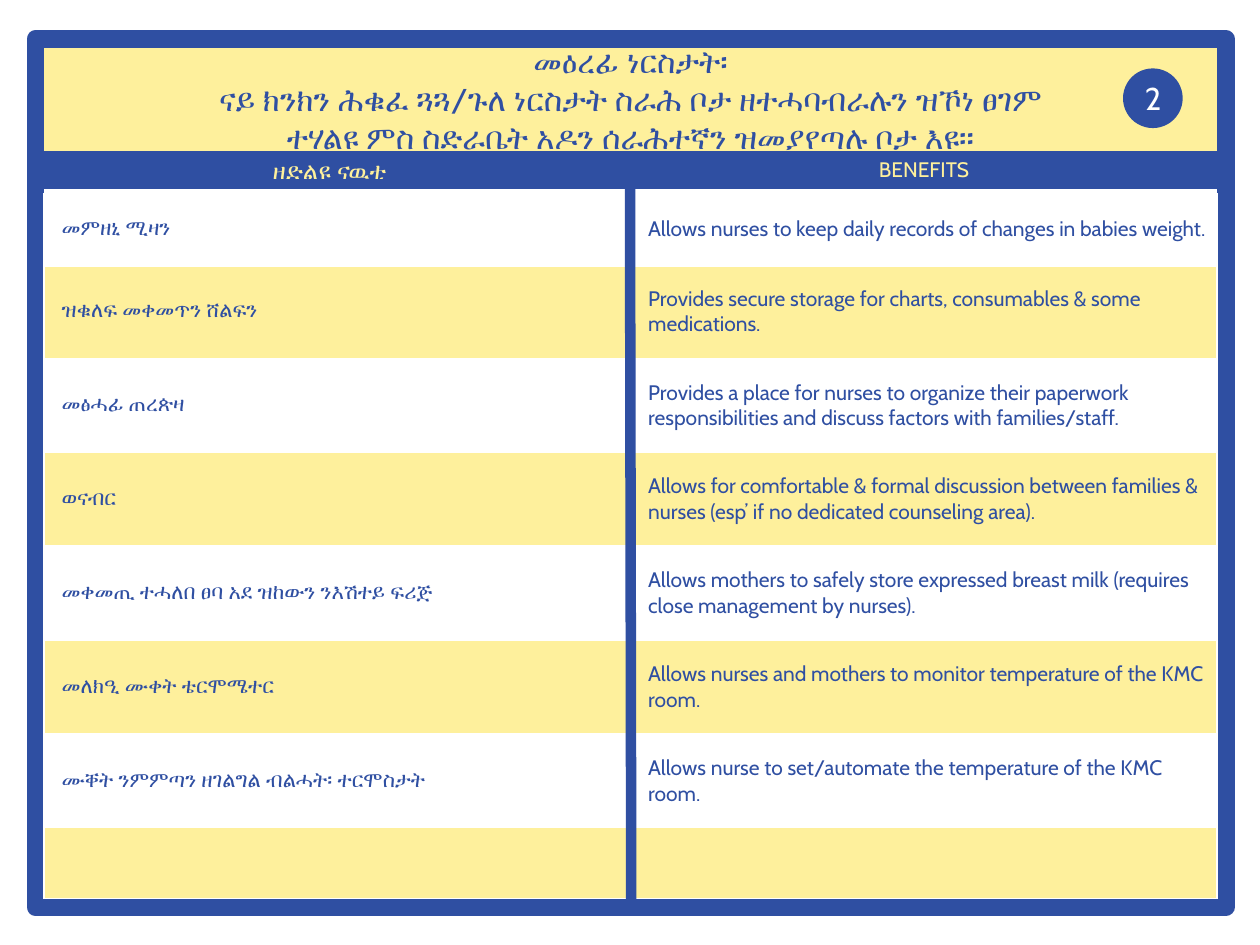
import pptx
import pptx.util
import pptx.dml.color
import pptx.enum.shapes
import pptx.enum.text
import pptx.oxml
import pptx.oxml.ns

COLORS = {"blue": "2F4FA2", "yellow": "FEF09C", "white": "FFFFFF"}
RGB = {name: pptx.dml.color.RGBColor.from_string(value) for name, value in COLORS.items()}
SHAPES = pptx.enum.shapes.MSO_SHAPE
CENTER = pptx.enum.text.PP_ALIGN.CENTER
MIDDLE = pptx.enum.text.MSO_ANCHOR.MIDDLE

presentation = pptx.Presentation()
presentation.slide_width = pptx.util.Inches(10)
presentation.slide_height = pptx.util.Inches(7.5)
slide = presentation.slides.add_slide(presentation.slide_layouts[6])
column = presentation.slide_width / 100
row = presentation.slide_height / 75


def place(left, top, width, height):
    return round(left * column), round(top * row), round(width * column), round(height * row)


def write(text_frame, text, size, color, alignment=None):
    text_frame.word_wrap = True
    text_frame.text = text
    for paragraph in text_frame.paragraphs:
        paragraph.alignment = alignment
        for run in paragraph.runs:
            run.font.name = "Cabin"
            run.font.size = pptx.util.Pt(size)
            run.font.color.rgb = RGB[color]


panels = [
    (SHAPES.RECTANGLE, (2.8, 3.1, 94.5, 11.8), "yellow", None),
    (SHAPES.RECTANGLE, (2.8, 3.1, 94.5, 68.9), None, 10),
    (SHAPES.RECTANGLE, (2.8, 12, 94.5, 3), "blue", None),
]
for kind, box, fill, line_width in panels:
    panel = slide.shapes.add_shape(kind, *place(*box))
    panel.shadow.inherit = False
    if fill:
        panel.fill.solid()
        panel.fill.fore_color.rgb = RGB[fill]
    else:
        panel.fill.background()
    if line_width:
        panel.line.color.rgb = RGB["blue"]
        panel.line.width = pptx.util.Pt(line_width)
    else:
        panel.line.fill.background()

for left, height, text, size in [(2.8, 3.4, "ዘድልዩ ናዉቲ", 14), (50, 3, "BENEFITS", 12)]:
    heading = slide.shapes.add_textbox(*place(left, 11.9, 46.7, height))
    write(heading.text_frame, text, size, "yellow", CENTER)

items = [
    ("መምዘኒ ሚዛን", "Allows nurses to keep daily records of changes in babies weight."),
    ("ዝቁለፍ መቀመጥን ሸልፍን", "Provides secure storage for charts, consumables & some medications."),
    ("መፅሓፊ ጠረጵዛ", "Provides a place for nurses to organize their paperwork responsibilities and discuss factors with families/staff."),
    ("ወናብር", "Allows for comfortable & formal discussion between families & nurses (esp’ if no dedicated counseling area)."),
    ("መቀመጢ ተሓለበ ፀባ አደ ዝከውን ንእሽተይ ፍሪጅ", "Allows mothers to safely store expressed breast milk (requires close management by nurses)."),
    ("መለክዒ ሙቀት ቴርሞሜተር", "Allows nurses and mothers to monitor temperature of the KMC room."),
    ("ሙቐት ንምምጣን ዘገልግል ብልሓት፡ ተርሞስታት", "Allows nurse to set/automate the temperature of the KMC room."),
    ("", ""),
]
table = slide.shapes.add_table(len(items), 2, *place(3.5, 15.4, 93.1, 56)).table
table.first_row = False
table.horz_banding = False
for row_index, texts in enumerate(items):
    is_edge = row_index in (0, len(items) - 1)
    table.rows[row_index].height = round((5.6 if is_edge else 7.45) * row)
    for column_index, text in enumerate(texts):
        cell = table.cell(row_index, column_index)
        cell.vertical_anchor = MIDDLE
        cell.margin_left = pptx.util.Inches(0.14)
        cell.margin_right = pptx.util.Inches(0.07)
        cell.margin_top = cell.margin_bottom = pptx.util.Inches(0.04)
        write(cell.text_frame, text, 12, "blue")
        properties = cell._tc.get_or_add_tcPr()
        for side in ("lnL", "lnR", "lnT", "lnB"):
            thick = (row_index, side) in ((0, "lnB"), (1, "lnT"))
            properties.append(pptx.oxml.parse_xml(
                f'<a:{side} {pptx.oxml.ns.nsdecls("a")} w="{pptx.util.Pt(3 if thick else 1)}">'
                f'<a:solidFill><a:srgbClr val="{COLORS["white"]}"/></a:solidFill></a:{side}>'
            ))
        cell.fill.solid()
        cell.fill.fore_color.rgb = RGB["yellow" if row_index % 2 else "white"]

title = slide.shapes.add_textbox(*place(2.8, 2.8, 94.5, 10.1))
title.text_frame.vertical_anchor = MIDDLE
title_lines = [
    "መዕረፊ ነርስታት፡",
    "ናይ ክንክን ሕቁፈ ጓጓ/ጉለ ነርስታት ስራሕ ቦታ ዘተሓባብራሉን ዝኾነ ፀገም",
    "ተሃልዩ ምስ ስድራቤት አዶን ሰራሕተኛን ዝመያየጣሉ ቦታ እዩ፡፡",
]
write(title.text_frame, "\n".join(title_lines), 18, "blue", CENTER)
title.text_frame.paragraphs[0].runs[0].font.bold = True

for ends in [(50, 14.6, 50.1, 71.5), (2.8, 14.6, 96.6, 14.6)]:
    divider = slide.shapes.add_connector(pptx.enum.shapes.MSO_CONNECTOR.STRAIGHT, *place(*ends))
    divider.line.color.rgb = RGB["blue"]
    divider.line.width = pptx.util.Pt(6)
    divider._element.spPr.append(pptx.oxml.parse_xml(f'<a:effectLst {pptx.oxml.ns.nsdecls("a")}/>'))

badge = slide.shapes.add_shape(SHAPES.OVAL, *place(89.2, 5.5, 4.6, 4.6))
badge.shadow.inherit = False
badge.fill.solid()
badge.fill.fore_color.rgb = RGB["blue"]
badge.line.color.rgb = RGB["blue"]
badge.line.width = pptx.util.Pt(1)
badge.text_frame.vertical_anchor = MIDDLE
write(badge.text_frame, "2", 18, "white", CENTER)

presentation.save("out.pptx")
